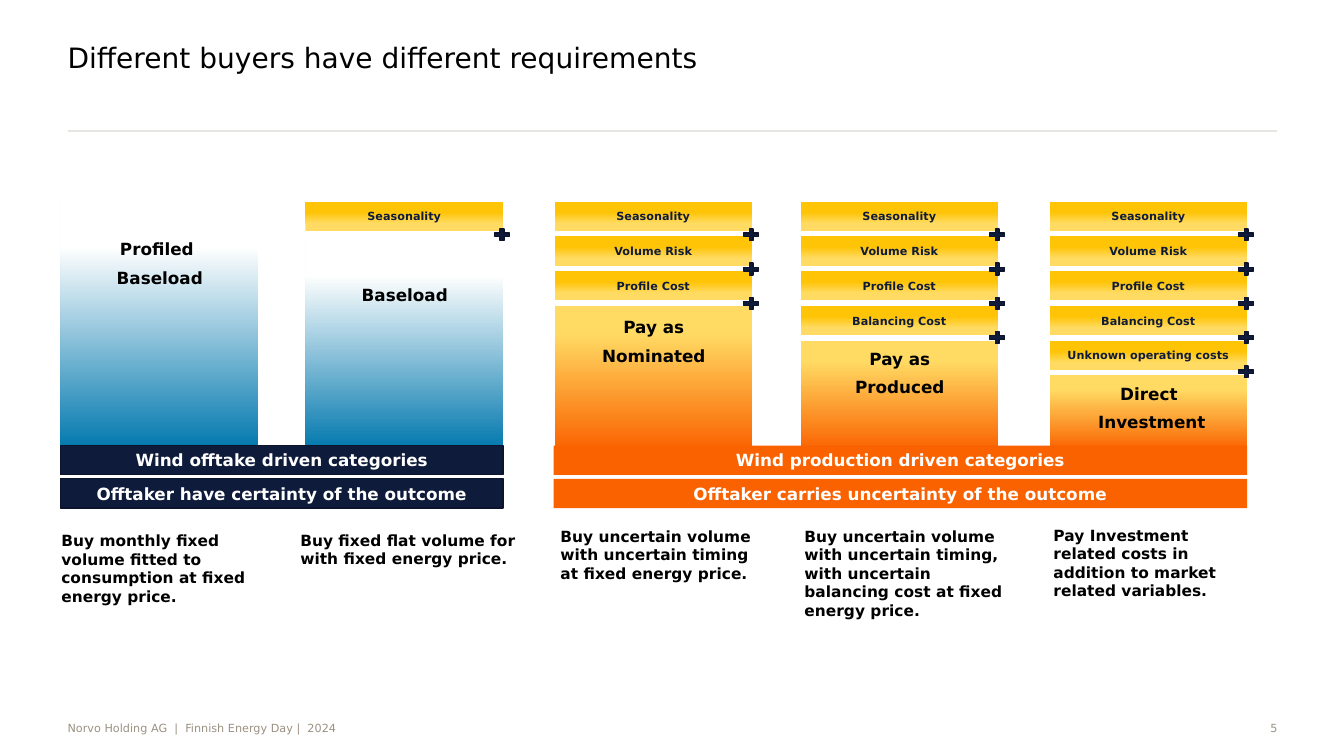
from lxml.etree import SubElement
from pptx import Presentation
from pptx.dml.color import RGBColor
from pptx.enum.shapes import MSO_CONNECTOR as Link, MSO_SHAPE as Kind
from pptx.enum.text import MSO_ANCHOR as Anchor, PP_ALIGN as Align
from pptx.oxml.ns import qn
from pptx.util import Inches, Pt

FONT = "DejaVu Sans"
NAVY, EDGE, ORANGE, GREY = "0F1B3B", "0B142C", "FA6200", "9B9183"
BLUE = ((0, "0077AD"), (0.82, "FFFFFF"))
FLAME = ((0, ORANGE), (0.82, "FFDB64"))
GOLD = ((0.24, "FFDB64"), (0.64, "FFC405"))

TITLE = "Different buyers have different requirements"
FOOTER = "Norvo Holding AG  |  Finnish Energy Day |  2024"
COSTS = ["Seasonality", "Volume Risk", "Profile Cost", "Balancing Cost",
         "Unknown operating costs"]

# left, cost count, colours, label, label drop, note, note box
BUYERS = [
    (0.6, 0, BLUE, ["Profiled ", "Baseload"], 0.38,
     "Buy monthly fixed volume fitted to consumption at fixed energy price.",
     (0.42, 5.22, 2.29, 1.11)),
    (3.03, 1, BLUE, ["Baseload"], 0.35,
     "Buy fixed flat volume for with fixed energy price.",
     (2.79, 5.22, 2.48, 0.47)),
    (5.5, 3, FLAME, ["Pay as", "Nominated"], 0.12,
     "Buy uncertain volume with uncertain timing at fixed energy price.",
     (5.37, 5.18, 2.21, 0.66)),
    (7.94, 4, FLAME, ["Pay as", "Produced"], 0.09,
     "Buy uncertain volume with uncertain timing, with uncertain "
     "balancing cost at fixed energy price.",
     (7.79, 5.18, 2.29, 1.03)),
    (10.41, 5, FLAME, ["Direct", " Investment"], 0.09,
     "Pay Investment related costs in addition to market related variables.",
     (10.26, 5.17, 2.29, 0.84)),
]
BANDS = [
    (0.6, 4.39, NAVY, EDGE, ["Wind offtake driven categories",
                             "Offtaker have certainty of the outcome"]),
    (5.49, 6.88, ORANGE, None, ["Wind production driven categories",
                                "Offtaker carries uncertainty of the outcome"]),
]
WIDE, TALL, TOP, STEP, BASE = 1.96, 0.29, 2.0, 0.345, 4.47

deck = Presentation()
deck.slide_width, deck.slide_height = Inches(13.33), Inches(7.5)
slide = deck.slides.add_slide(deck.slide_layouts[6])
shapes = slide.shapes


def color(code):
    return RGBColor.from_string(code)


def write(text, box=None, shape=None, size=12, ink="000000", bold=True,
          align=Align.CENTER, anchor=Anchor.MIDDLE, pad=None, wrap=True,
          before=0, after=0, lead=None, indent=0):
    shape = shape or shapes.add_textbox(*map(Inches, box))
    frame = shape.text_frame
    frame.word_wrap, frame.vertical_anchor = wrap, anchor
    if pad is not None:
        frame.margin_left = frame.margin_right = Inches(pad)
        frame.margin_top = frame.margin_bottom = Inches(pad)
    lines = [text] if isinstance(text, str) else text
    for i, line in enumerate(lines):
        para = frame.add_paragraph() if i else frame.paragraphs[0]
        para.alignment = align
        para.space_before, para.space_after = Pt(before), Pt(after)
        if lead:
            para.line_spacing = lead
        if indent:
            props = para._p.get_or_add_pPr()
            props.set("marL", str(Inches(indent)))
            props.set("indent", "0")
        run = para.add_run()
        run.text = line
        font = run.font
        font.name, font.size, font.bold = FONT, Pt(size), bold
        font.color.rgb = color(ink)


def draw(kind, box, fill, edge=None):
    shape = shapes.add_shape(kind, *map(Inches, box))
    shape.shadow.inherit = False
    if isinstance(fill, str):
        shape.fill.solid()
        shape.fill.fore_color.rgb = color(fill)
    else:
        shape.fill.gradient()
        shape.fill.gradient_angle = 90
        for stop, (place, code) in zip(shape.fill.gradient_stops, fill):
            stop.position = place
            stop.color.rgb = color(code)
    if edge:
        shape.line.color.rgb = color(edge)
        shape.line.width = Pt(1)
    else:
        shape.line.fill.background()
    return shape


rule = shapes.add_connector(Link.STRAIGHT, *map(Inches, (0.67, 1.3, 12.67, 1.3)))
rule.line.color.rgb = color("E8E6E3")
rule.line.width = Pt(1.5)
SubElement(rule._element.spPr, qn("a:effectLst"))

write(TITLE, (0.67, 0.44, 10.75, 0.81), size=20, bold=False, pad=0,
      align=Align.LEFT, anchor=Anchor.TOP, lead=0.9)
write("5", (12.41, 7.09, 0.26, 0.26), size=8, ink=GREY, bold=False, pad=0,
      align=Align.RIGHT, after=6)
write(FOOTER, (0.67, 7.09, 9.82, 0.26), size=8, ink=GREY, bold=False, pad=0,
      align=Align.LEFT, wrap=False)

for left, count, fill, label, drop, note, box in BUYERS:
    top = TOP + count * STEP
    draw(Kind.RECTANGLE, (left, top, WIDE, BASE - top), fill)
    write(label, (left + 0.23, top + drop, 1.51, 0.46), pad=0, after=6)
    for i, cost in enumerate(COSTS[:count]):
        tag = draw(Kind.RECTANGLE, (left, TOP + i * STEP, WIDE, TALL), GOLD)
        write(cost, shape=tag, size=8, ink=NAVY)
    for i in range(count):
        draw(Kind.MATH_PLUS, (left + 1.85, 2.25 + i * 0.34, 0.2, 0.16), NAVY, EDGE)
    write(note, box, size=11, align=Align.LEFT, anchor=Anchor.TOP,
          before=3, after=3, indent=0.09)

for left, width, fill, edge, lines in BANDS:
    for i, line in enumerate(lines):
        band = draw(Kind.RECTANGLE, (left, 4.42 + i * 0.33, width, TALL), fill, edge)
        write(line, shape=band, ink="FFFFFF")

deck.save("out.pptx")
